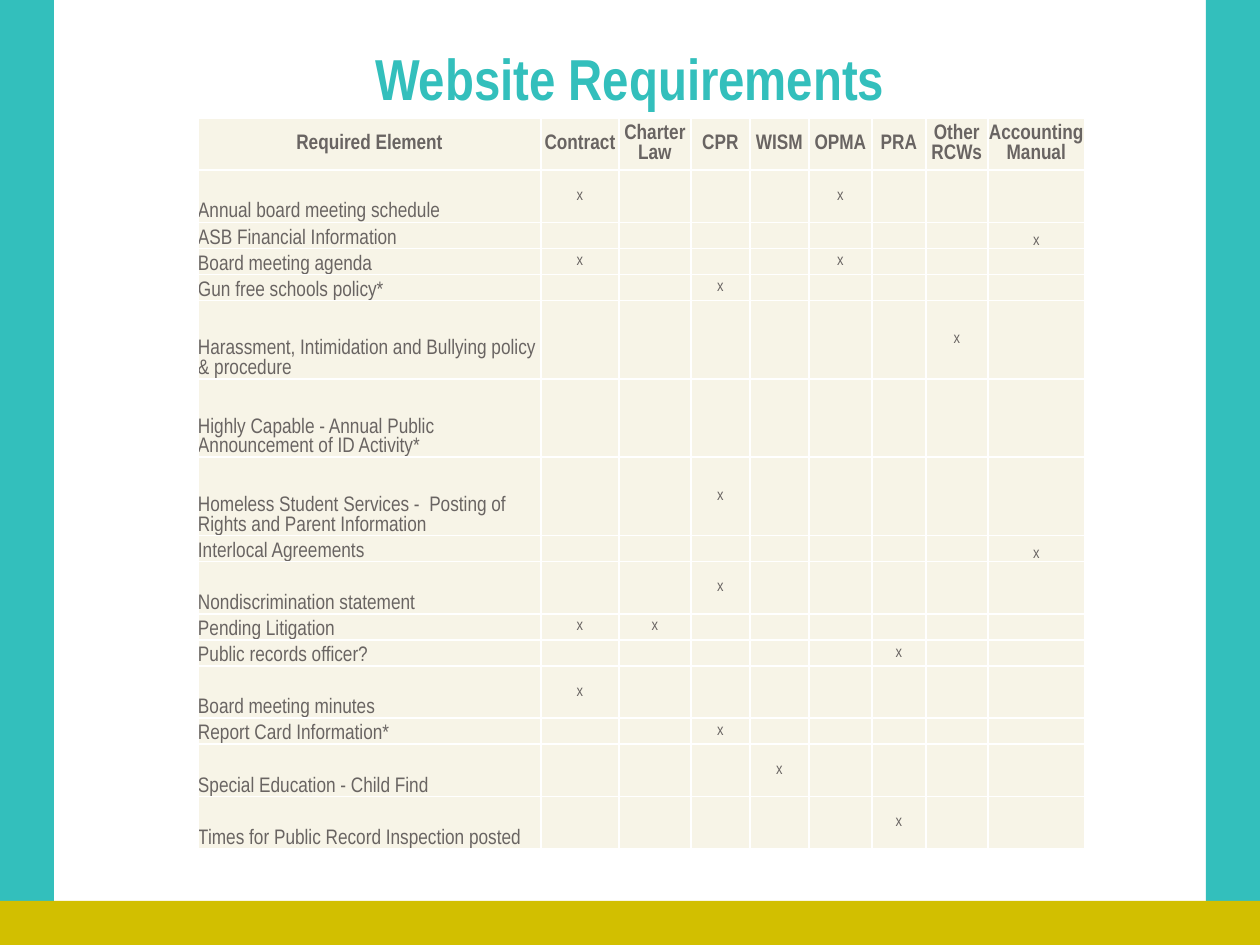
from lxml import etree
from pptx import Presentation
from pptx.dml.color import RGBColor
from pptx.enum.shapes import MSO_SHAPE
from pptx.enum.text import MSO_ANCHOR, PP_ALIGN
from pptx.oxml import parse_xml
from pptx.oxml.ns import nsdecls, qn
from pptx.util import Emu, Pt

RECTANGLE = MSO_SHAPE.RECTANGLE
TOP, MIDDLE, BOTTOM = MSO_ANCHOR.TOP, MSO_ANCHOR.MIDDLE, MSO_ANCHOR.BOTTOM
LEFT, CENTER = PP_ALIGN.LEFT, PP_ALIGN.CENTER

PX = 914400 // 126
FONT = "Arial Narrow"
TEAL, MUSTARD, CREAM, GREY = "33BFBC", "D2BF00", "F7F4E7", "696462"


def style_text(paragraph, size, color, bold, align):
    paragraph.alignment = align
    for run in paragraph.runs:
        run.font.name = FONT
        run.font.size = Pt(size)
        run.font.bold = bold
        run.font.color.rgb = RGBColor.from_string(color)


def add_white_borders(cell):
    properties = cell._tc.get_or_add_tcPr()
    for index, side in enumerate(("lnL", "lnR", "lnT", "lnB")):
        properties.insert(index, parse_xml(
            f'<a:{side} {nsdecls("a")} w="12700"><a:solidFill>'
            f'<a:srgbClr val="FFFFFF"/></a:solidFill></a:{side}>'))


prs = Presentation()
prs.slide_width = Emu(1260 * PX)
prs.slide_height = Emu(945 * PX)
slide = prs.slides.add_slide(prs.slide_layouts[6])

# Frame
for left, top, width, height, color in (
    (0, 0, 54, 945, TEAL),
    (1206, 0, 54, 945, TEAL),
    (0, 901, 1260, 47, MUSTARD),
):
    bar = slide.shapes.add_shape(
        RECTANGLE, left * PX, top * PX, width * PX, height * PX)
    bar.shadow.inherit = False
    bar.fill.solid()
    bar.fill.fore_color.rgb = RGBColor.from_string(color)
    bar.line.fill.background()

# Title
title = slide.shapes.add_textbox(110 * PX, 44 * PX, 1040 * PX, 147 * PX).text_frame
title.word_wrap = True
title.vertical_anchor = TOP
title.text = "Website Requirements"
title.paragraphs[0].line_spacing = 0.9
style_text(title.paragraphs[0], 33, TEAL, True, CENTER)

# Requirements table: each source with its column width
sources = [
    ("Required Element", 343), ("Contract", 78), ("Charter Law", 72),
    ("CPR", 59), ("WISM", 59), ("OPMA", 63), ("PRA", 54),
    ("Other RCWs", 62), ("Accounting Manual", 97),
]
# Element, row height in units, marked sources
elements = [
    ("Annual board meeting schedule", 2, ["Contract", "OPMA"]),
    ("ASB Financial Information", 1, ["Accounting Manual"]),
    ("Board meeting agenda", 1, ["Contract", "OPMA"]),
    ("Gun free schools policy*", 1, ["CPR"]),
    ("Harassment, Intimidation and Bullying policy & procedure", 3, ["Other RCWs"]),
    ("Highly Capable - Annual Public Announcement of ID Activity*", 3, []),
    ("Homeless Student Services -  Posting of Rights and Parent Information", 3, ["CPR"]),
    ("Interlocal Agreements", 1, ["Accounting Manual"]),
    ("Nondiscrimination statement", 2, ["CPR"]),
    ("Pending Litigation", 1, ["Contract", "Charter Law"]),
    ("Public records officer?", 1, ["PRA"]),
    ("Board meeting minutes", 2, ["Contract"]),
    ("Report Card Information*", 1, ["CPR"]),
    ("Special Education - Child Find", 2, ["WISM"]),
    ("Times for Public Record Inspection posted", 2, ["PRA"]),
]
names = [name for name, _ in sources]
row_units = [2] + [units for _, units, _ in elements]
rows = [names] + [
    [element] + ["x" if name in marked else "" for name in names[1:]]
    for element, _, marked in elements
]

table_width = sum(width for _, width in sources)
table_height = 731
requirements = slide.shapes.add_table(
    len(rows), len(sources), 198 * PX, 118 * PX,
    table_width * PX, table_height * PX).table
requirements.first_row = False
requirements.horz_banding = False
for column, (_, width) in zip(requirements.columns, sources):
    column.width = Emu(width * PX)
for row, units in zip(requirements.rows, row_units):
    row.height = Emu(table_height * PX * units // sum(row_units))

for r, texts in enumerate(rows):
    for c, text in enumerate(texts):
        cell = requirements.cell(r, c)
        cell.margin_left = cell.margin_right = 0
        cell.margin_top = cell.margin_bottom = 0
        cell.fill.solid()
        cell.fill.fore_color.rgb = RGBColor.from_string(CREAM)
        add_white_borders(cell)
        is_header, is_element = r == 0, c == 0
        at_bottom = not is_header and names[c] in ("Required Element", "Accounting Manual")
        cell.vertical_anchor = BOTTOM if at_bottom else MIDDLE
        paragraph = cell.text_frame.paragraphs[0]
        if text:
            paragraph.text = text
            style_text(paragraph, 12 if is_header or is_element else 9, GREY,
                       is_header, LEFT if is_element and not is_header else CENTER)
        else:
            # A small end mark keeps empty cells from stretching the low rows
            etree.SubElement(paragraph._p, qn("a:endParaRPr"), sz="900")

prs.save("out.pptx")
